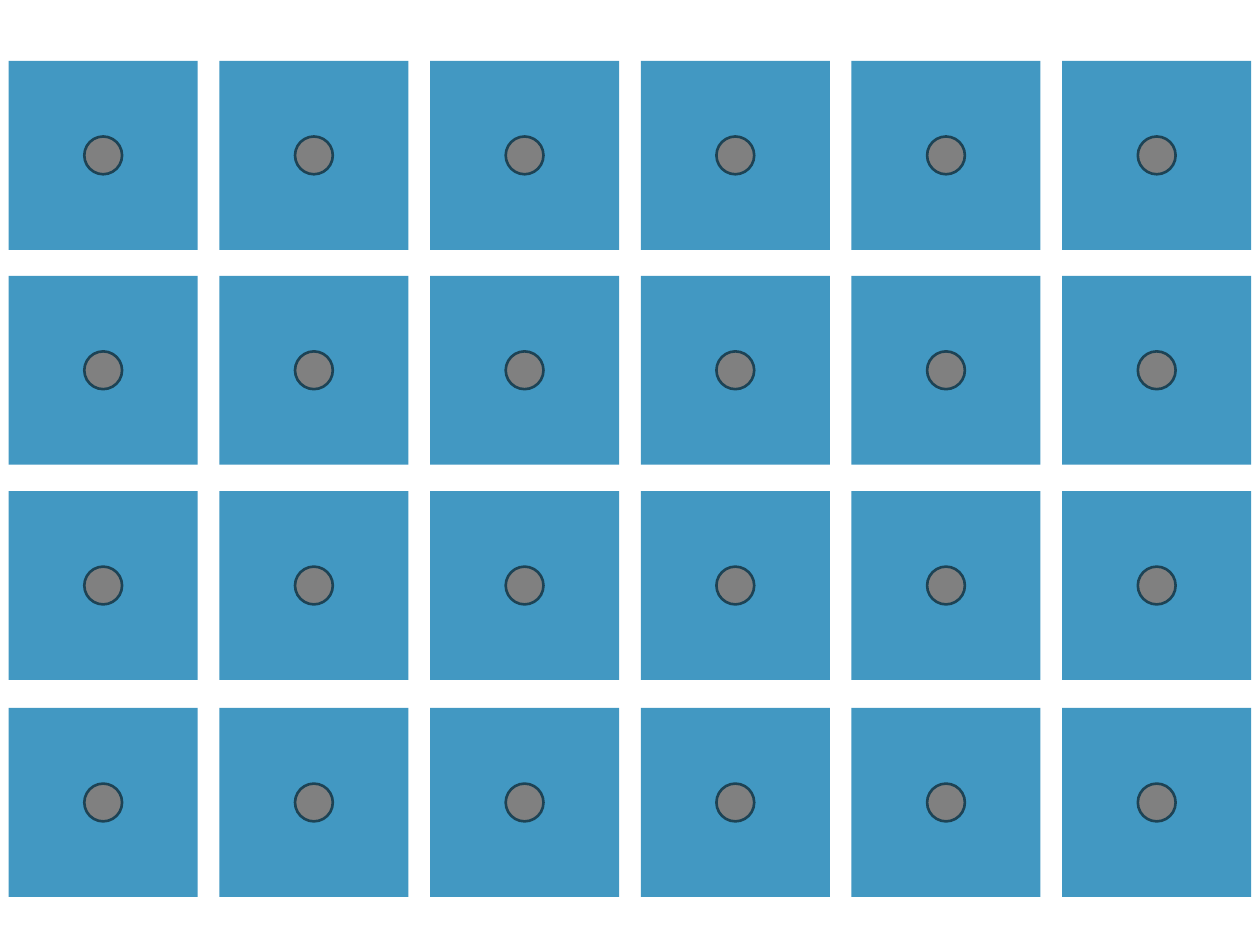
from pptx import Presentation
from pptx.dml.color import RGBColor
from pptx.enum.shapes import MSO_SHAPE as Preset
from pptx.util import Pt

COLORS = {"tile": "4298C2", "dot": "808080", "outline": "1D4355"}

TILE_SIZE = 108
DOT_SIZE = 21.6
OUTLINE_WIDTH = 1.5
COLUMNS = 6
FIRST_LEFT = 5
COLUMN_STEP = 120.4
ROW_TOPS = (34.8, 157.6, 280.6, 404.6)


def add_square_shape(group, preset, left, top, size, fill, outline=None):
    """Add a shape of equal width and height, without a line unless outline is given."""
    shape = group.shapes.add_shape(preset, Pt(left), Pt(top), Pt(size), Pt(size))
    shape.shadow.inherit = False
    shape.fill.solid()
    shape.fill.fore_color.rgb = RGBColor.from_string(COLORS[fill])
    if outline:
        shape.line.color.rgb = RGBColor.from_string(COLORS[outline])
        shape.line.width = Pt(OUTLINE_WIDTH)
    else:
        shape.line.fill.background()


def add_dotted_tile(slide, left, top):
    """Add a grouped square with a dot at its centre."""
    group = slide.shapes.add_group_shape()
    inset = (TILE_SIZE - DOT_SIZE) / 2
    add_square_shape(group, Preset.RECTANGLE, left, top, TILE_SIZE, "tile")
    add_square_shape(group, Preset.OVAL, left + inset, top + inset, DOT_SIZE,
                     "dot", "outline")


def main():
    presentation = Presentation()
    presentation.slide_width = Pt(720)
    presentation.slide_height = Pt(540)
    blank_layout = presentation.slide_layouts[6]
    slide = presentation.slides.add_slide(blank_layout)
    for column in range(COLUMNS):
        for top in ROW_TOPS:
            add_dotted_tile(slide, FIRST_LEFT + column * COLUMN_STEP, top)
    presentation.save("out.pptx")


if __name__ == "__main__":
    main()
